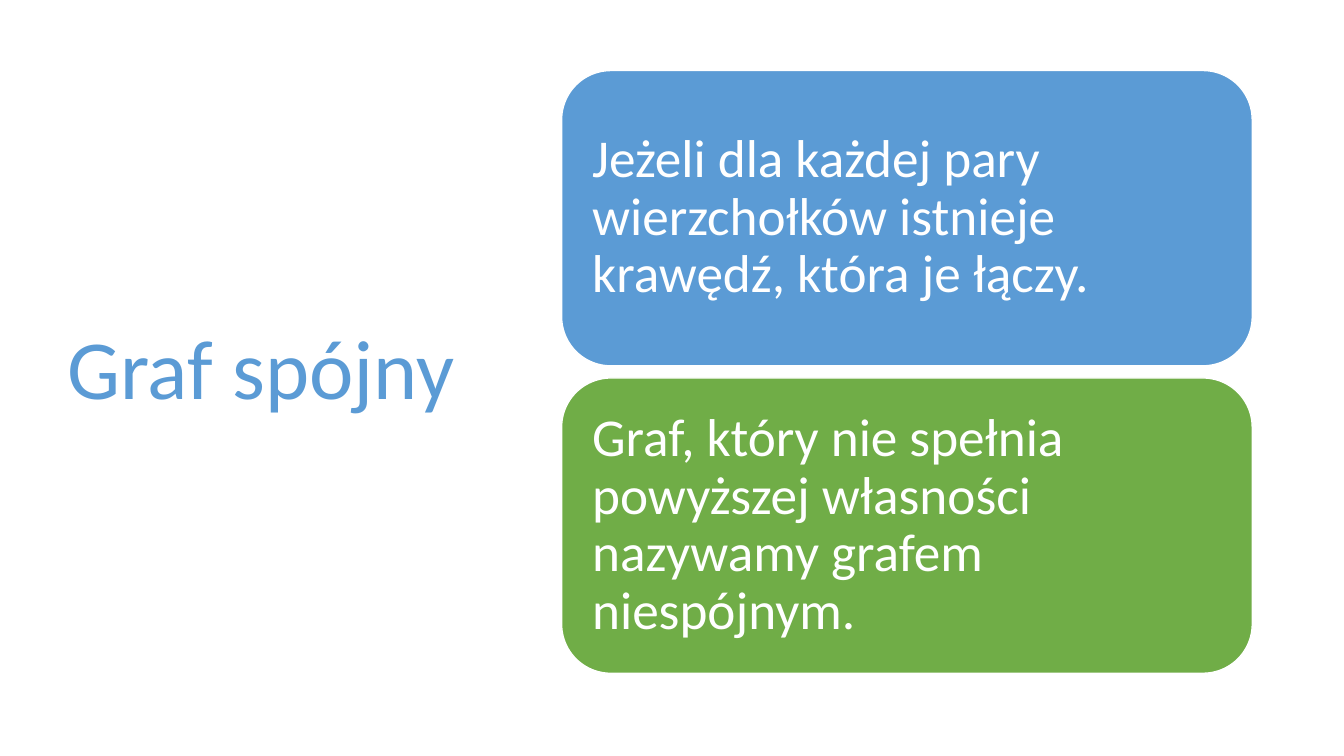
from pptx import Presentation
from pptx.dml.color import RGBColor
from pptx.enum.shapes import MSO_SHAPE
from pptx.enum.text import MSO_ANCHOR, PP_ALIGN
from pptx.util import Inches, Pt

BLUE, GREEN, WHITE = "5B9BD5", "70AD47", "FFFFFF"


def color(code):
    return RGBColor.from_string(code)


def write(frame, text, size, tint, font="Calibri", inset=0.1):
    frame.word_wrap = True
    frame.vertical_anchor = MSO_ANCHOR.MIDDLE
    frame.margin_left = frame.margin_right = Inches(inset)
    frame.margin_top = frame.margin_bottom = Inches(min(inset, 0.16))
    para = frame.paragraphs[0]
    para.alignment = PP_ALIGN.LEFT
    para.line_spacing = 0.9
    run = para.add_run()
    run.text = text
    run.font.name = font
    run.font.size = Pt(size)
    run.font.color.rgb = color(tint)


class Deck:
    def __init__(self, slide):
        self.slide = slide

    def title(self, text, *box):
        label = self.slide.shapes.add_textbox(*map(Inches, box))
        write(label.text_frame, text, size=60, tint=BLUE)

    def card(self, text, fill, *box):
        card = self.slide.shapes.add_shape(
            MSO_SHAPE.ROUNDED_RECTANGLE, *map(Inches, box))
        card.shadow.inherit = False
        card.fill.solid()
        card.fill.fore_color.rgb = color(fill)
        card.line.color.rgb = color(WHITE)
        card.line.width = Pt(1)
        write(card.text_frame, text, size=38, tint=WHITE, inset=0.16)


def main():
    show = Presentation()
    show.slide_width, show.slide_height = Inches(13.33), Inches(7.5)
    deck = Deck(show.slides.add_slide(show.slide_layouts[6]))
    deck.title("Graf spójny", 0.57, 0.68, 4.16, 6.02)

    cards = [
        ("Jeżeli dla każdej pary wierzchołków istnieje krawędź, "
         "która je łączy.", BLUE),
        ("Graf, który nie spełnia powyższej własności nazywamy "
         "grafem niespójnym.", GREEN),
    ]
    top, high, gap = 0.7, 2.93, 0.12
    for row, (text, fill) in enumerate(cards):
        deck.card(text, fill, 5.57, top + row * (high + gap), 6.85, high)

    show.save("out.pptx")


if __name__ == "__main__":
    main()
